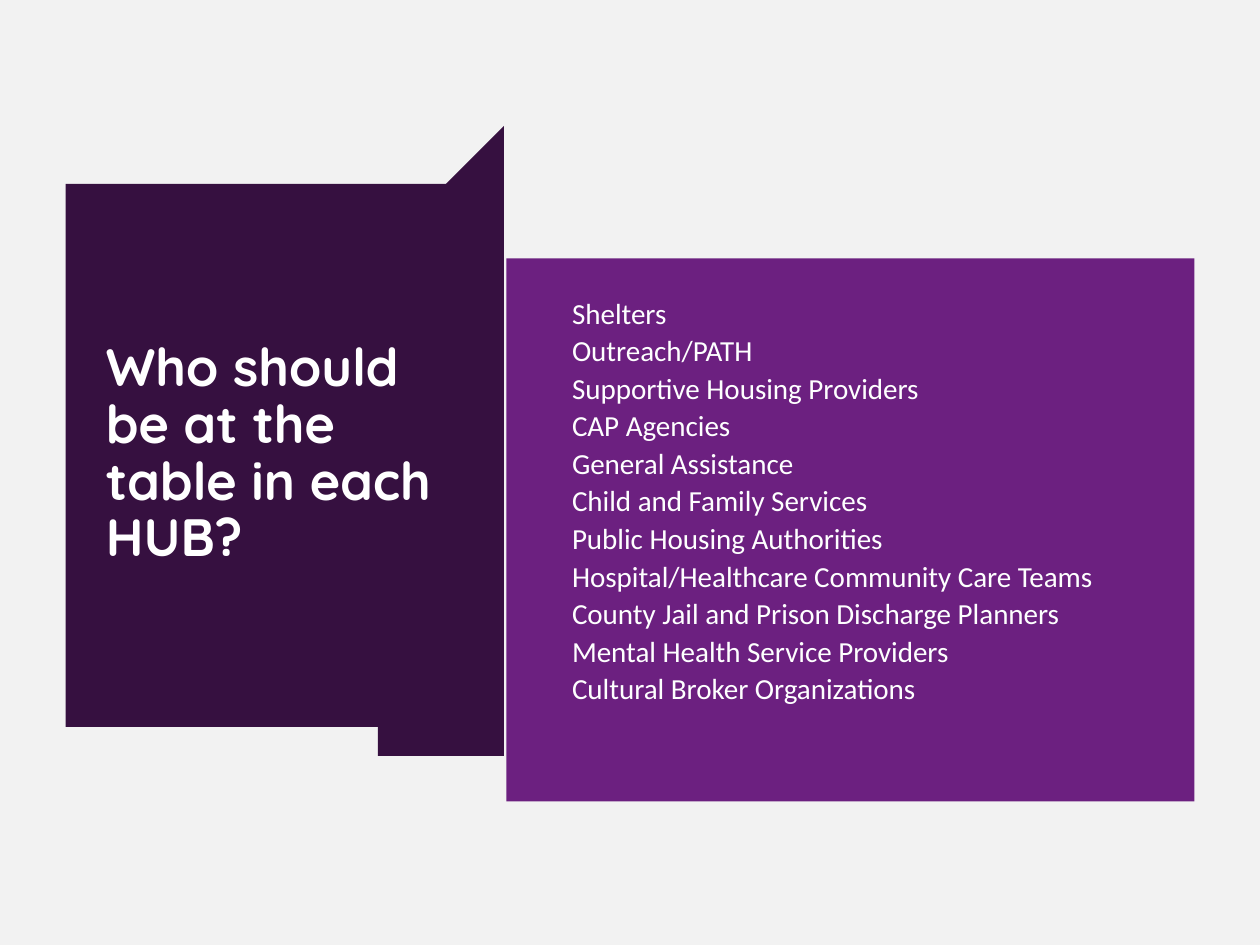
from typing import NamedTuple

from pptx import Presentation
from pptx.dml.color import RGBColor
from pptx.enum.shapes import MSO_SHAPE
from pptx.enum.text import MSO_ANCHOR, PP_ALIGN
from pptx.util import Inches, Pt

RECTANGLE = MSO_SHAPE.RECTANGLE
MIDDLE = MSO_ANCHOR.MIDDLE
LEFT = PP_ALIGN.LEFT

BACKGROUND = RGBColor(0xF2, 0xF2, 0xF2)
DARK_PURPLE = RGBColor(0x36, 0x10, 0x40)
FOLD_PURPLE = RGBColor(0x51, 0x18, 0x60)
PURPLE = RGBColor(0x6C, 0x20, 0x80)
WHITE = RGBColor(0xFF, 0xFF, 0xFF)
LIST_WHITE = RGBColor(0xFE, 0xFF, 0xFF)

QUESTION = "Who should be at the table in each HUB?"
PARTICIPANTS = [
    "Shelters",
    "Outreach/PATH",
    "Supportive Housing Providers",
    "CAP Agencies",
    "General Assistance",
    "Child and Family Services",
    "Public Housing Authorities",
    "Hospital/Healthcare Community Care Teams",
    "County Jail and Prison Discharge Planners",
    "Mental Health Service Providers",
    "Cultural Broker Organizations",
]


class Box(NamedTuple):
    left: float
    top: float
    width: float
    height: float


class Fold(NamedTuple):
    """A ribbon side with upright edges, given by its two edges."""
    left: float
    left_top: float
    left_bottom: float
    right: float
    right_top: float
    right_bottom: float
    color: RGBColor


QUESTION_PANEL = Box(0.52, 1.46, 3.28, 4.31)
LIST_PANEL = Box(4.02, 2.05, 5.46, 4.31)
FOLDS = [
    Fold(3.4, 1.68, 5.98, 4.02, 2.06, 6.36, FOLD_PURPLE),
    Fold(3.4, 1.67, 5.99, 3.8, 1.46, 5.77, DARK_PURPLE),
]


def paint(shape, color: RGBColor) -> None:
    shape.shadow.inherit = False
    shape.fill.solid()
    shape.fill.fore_color.rgb = color
    shape.line.fill.background()


def add_panel(slide, box: Box, color: RGBColor) -> None:
    panel = slide.shapes.add_shape(RECTANGLE, *map(Inches, box))
    paint(panel, color)


def add_fold(slide, fold: Fold) -> None:
    builder = slide.shapes.build_freeform(fold.left, fold.left_top, scale=Inches(1))
    builder.add_line_segments([
        (fold.right, fold.right_top),
        (fold.right, fold.right_bottom),
        (fold.left, fold.left_bottom),
    ], close=True)
    paint(builder.convert_to_shape(), fold.color)


def set_frame(frame, left_margin: float) -> None:
    frame.word_wrap = True
    frame.vertical_anchor = MIDDLE
    frame.margin_left = Inches(left_margin)
    frame.margin_right = Inches(0.07)
    frame.margin_top = frame.margin_bottom = Inches(0.04)


def set_font(font, name: str, size: float, color: RGBColor, bold: bool) -> None:
    font.name = name
    font.size = Pt(size)
    font.color.rgb = color
    font.bold = bold


def add_question(slide, box: Box) -> None:
    title = slide.shapes.title
    title.left, title.top, title.width, title.height = map(Inches, box)
    frame = title.text_frame
    frame.text = QUESTION
    set_frame(frame, 0.07)
    paragraph = frame.paragraphs[0]
    paragraph.alignment = LEFT
    paragraph.line_spacing = 0.9
    set_font(paragraph.runs[0].font, "Quicksand", 30, WHITE, True)
    # Bring the title in front of its panel
    title.element.getparent().append(title.element)


def add_participants(slide, box: Box) -> None:
    frame = slide.shapes.add_textbox(*map(Inches, box)).text_frame
    frame.text = "\n".join(PARTICIPANTS)
    set_frame(frame, 0.26)
    for index, paragraph in enumerate(frame.paragraphs):
        paragraph.line_spacing = 0.7
        paragraph.space_before = Pt(7.5 if index else 0)
        set_font(paragraph.runs[0].font, "Calibri", 16.6, LIST_WHITE, False)


def main() -> None:
    prs = Presentation()
    prs.slide_width, prs.slide_height = Inches(10), Inches(7.5)
    slide = prs.slides.add_slide(prs.slide_layouts[5])
    slide.background.fill.solid()
    slide.background.fill.fore_color.rgb = BACKGROUND

    # Folded ribbon behind the question
    for fold in FOLDS:
        add_fold(slide, fold)
    add_panel(slide, QUESTION_PANEL, DARK_PURPLE)
    add_question(slide, Box(0.77, 1.74, 2.78, 3.74))

    # Participants
    add_panel(slide, LIST_PANEL, PURPLE)
    add_participants(slide, Box(4.28, 2.35, 4.88, 3.31))

    prs.save("out.pptx")


if __name__ == "__main__":
    main()
